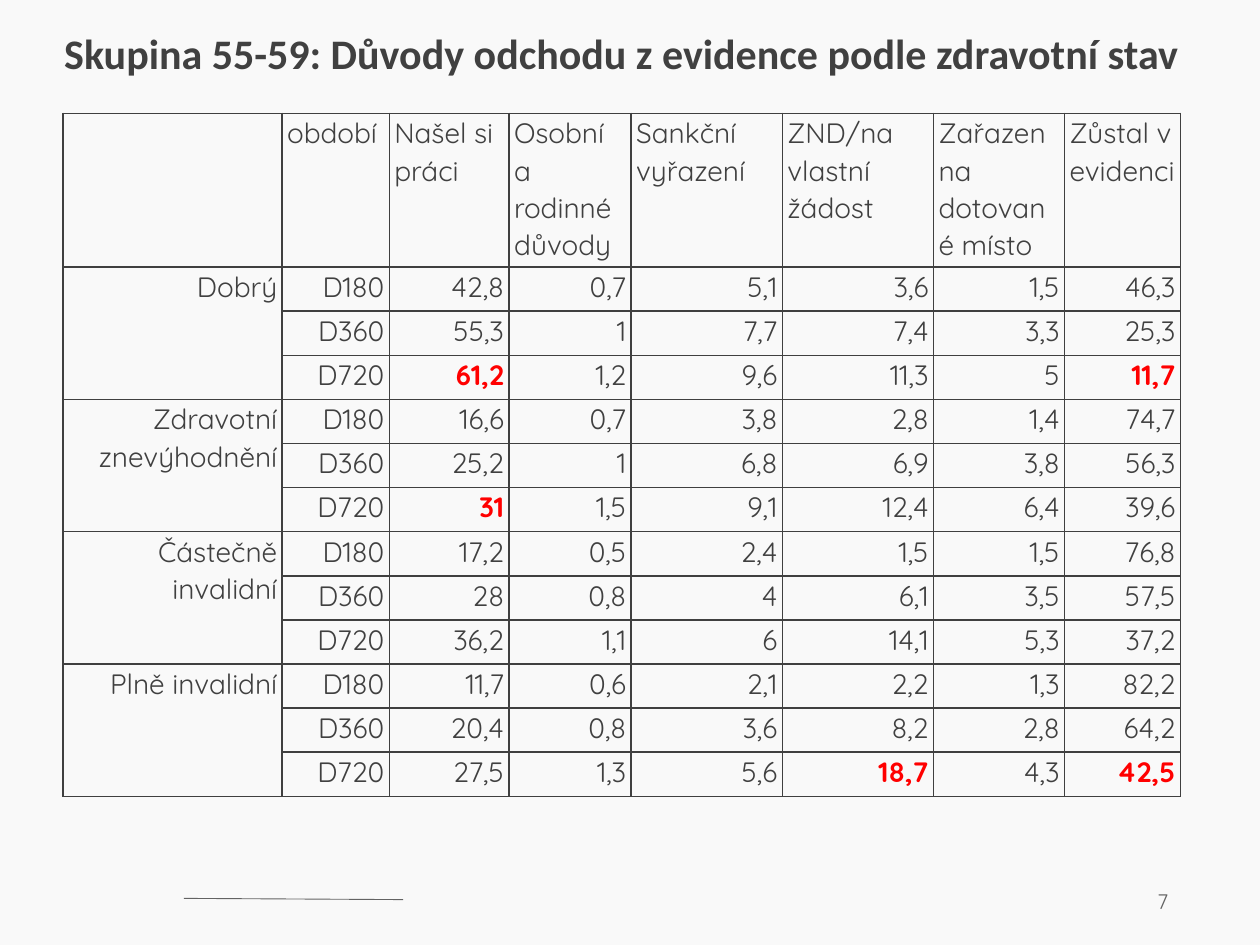
from dataclasses import dataclass

from lxml import etree
from pptx import Presentation
from pptx.dml.color import RGBColor
from pptx.enum.shapes import MSO_CONNECTOR
from pptx.enum.text import MSO_ANCHOR, MSO_AUTO_SIZE, PP_ALIGN
from pptx.oxml.ns import qn
from pptx.util import Inches, Pt

LEFT, RIGHT = PP_ALIGN.LEFT, PP_ALIGN.RIGHT
TOP, MIDDLE = MSO_ANCHOR.TOP, MSO_ANCHOR.MIDDLE
STRAIGHT = MSO_CONNECTOR.STRAIGHT

TITLE = "Skupina 55-59: Důvody odchodu z evidence podle zdravotní stav"
PAGE = "7"
HEADS = ["", "období", "Našel si práci", "Osobní a rodinné důvody",
         "Sankční vyřazení", "ZND/na vlastní žádost",
         "Zařazen na dotované místo", "Zůstal v evidenci"]
TERMS = ["D180", "D360", "D720"]
# One line per period; a star marks a highlighted value.
GROUPS = {
    "Dobrý": ["42,8 0,7 5,1 3,6 1,5 46,3",
              "55,3 1 7,7 7,4 3,3 25,3",
              "61,2* 1,2 9,6 11,3 5 11,7*"],
    "Zdravotní znevýhodnění": ["16,6 0,7 3,8 2,8 1,4 74,7",
                               "25,2 1 6,8 6,9 3,8 56,3",
                               "31* 1,5 9,1 12,4 6,4 39,6"],
    "Částečně invalidní": ["17,2 0,5 2,4 1,5 1,5 76,8",
                           "28 0,8 4 6,1 3,5 57,5",
                           "36,2 1,1 6 14,1 5,3 37,2"],
    "Plně invalidní": ["11,7 0,6 2,1 2,2 1,3 82,2",
                       "20,4 0,8 3,6 8,2 2,8 64,2",
                       "27,5 1,3 5,6 18,7* 4,3 42,5*"],
}
COLS = [1.74, 0.85, 0.95, 0.97, 1.2, 1.2, 1.04, 0.92]
HEAD_ROW, ROW = 1.22, 0.35


@dataclass(frozen=True)
class Theme:
    back: str = "F9F9F9"
    ink: str = "404040"
    hot: str = "FF0000"
    soft: str = "636363"
    head: str = "Calibri"
    body: str = "Quicksand"
    big: int = 24
    text: int = 16
    small: int = 12


T = Theme()


def color(code):
    return RGBColor.from_string(code)


def write(para, text, size, face=T.body, ink=T.ink, bold=False, align=LEFT):
    para.alignment = align
    run = para.add_run()
    run.text = text
    font = run.font
    font.size, font.name, font.bold = Pt(size), face, bold
    font.color.rgb = color(ink)


def place(shape, *box):
    shape.left, shape.top, shape.width, shape.height = map(Inches, box)


def border(cell):
    """Draw all four sides; they must precede the cell's fill in the XML."""
    props = cell._tc.get_or_add_tcPr()
    for spot, side in enumerate(("lnL", "lnR", "lnT", "lnB")):
        line = etree.Element(qn(f"a:{side}"), w=str(Pt(1)))
        fill = etree.SubElement(line, qn("a:solidFill"))
        etree.SubElement(fill, qn("a:srgbClr"), val=T.ink)
        props.insert(spot, line)


def fill_cell(cell, text, align):
    cell.margin_left = cell.margin_right = Inches(0.04)
    cell.margin_top = cell.margin_bottom = 0
    cell.fill.background()
    border(cell)
    para = cell.text_frame.paragraphs[0]
    para.line_spacing, para.space_after = 1.07, Pt(8)
    if text:
        hot = text.endswith("*")
        write(para, text.rstrip("*"), T.text, ink=T.hot if hot else T.ink,
              bold=hot, align=align)


def add_title(slide):
    title = slide.shapes.title
    place(title, 0.51, 0.26, 8.99, 0.4)
    frame = title.text_frame
    frame.margin_left = frame.margin_right = 0
    frame.margin_top = frame.margin_bottom = 0
    frame.vertical_anchor, frame.auto_size = TOP, MSO_AUTO_SIZE.NONE
    frame.word_wrap = True
    para = frame.paragraphs[0]
    para.line_spacing = 0.9
    write(para, TITLE, T.big, T.head, bold=True)


def add_grid(slide):
    rows = [HEADS]
    for name, lines in GROUPS.items():
        for i, (term, line) in enumerate(zip(TERMS, lines)):
            rows.append(["" if i else name, term, *line.split()])
    highs = [HEAD_ROW] + [ROW] * (len(rows) - 1)
    table = slide.shapes.add_table(
        len(rows), len(COLS), Inches(0.5), Inches(0.9),
        Inches(sum(COLS)), Inches(sum(highs))).table
    table.first_row = table.horz_banding = False
    for col, wide in zip(table.columns, COLS):
        col.width = Inches(wide)
    for r, (texts, high) in enumerate(zip(rows, highs)):
        table.rows[r].height = Inches(high)
        for c, text in enumerate(texts):
            fill_cell(table.cell(r, c), text, RIGHT if r else LEFT)
    step = len(TERMS)
    for r in range(1, len(rows), step):
        table.cell(r, 0).merge(table.cell(r + step - 1, 0))


def add_foot(slide):
    ends = map(Inches, (1.46, 7.13, 3.2, 7.14))
    rule = slide.shapes.add_connector(STRAIGHT, *ends)
    rule.line.color.rgb, rule.line.width = color(T.soft), Pt(0.5)
    etree.SubElement(rule._element.spPr, qn("a:effectLst"))
    box = slide.shapes.add_textbox(0, 0, 0, 0)
    place(box, 7.12, 6.95, 2.25, 0.4)
    frame = box.text_frame
    frame.word_wrap, frame.vertical_anchor = True, MIDDLE
    write(frame.paragraphs[0], PAGE, T.small, ink=T.soft, align=RIGHT)


def main():
    deck = Presentation()
    deck.slide_width, deck.slide_height = Inches(10), Inches(7.5)
    slide = deck.slides.add_slide(deck.slide_layouts[5])
    back = slide.background.fill
    back.solid()
    back.fore_color.rgb = color(T.back)
    add_foot(slide)
    add_title(slide)
    add_grid(slide)
    deck.save("out.pptx")


if __name__ == "__main__":
    main()
